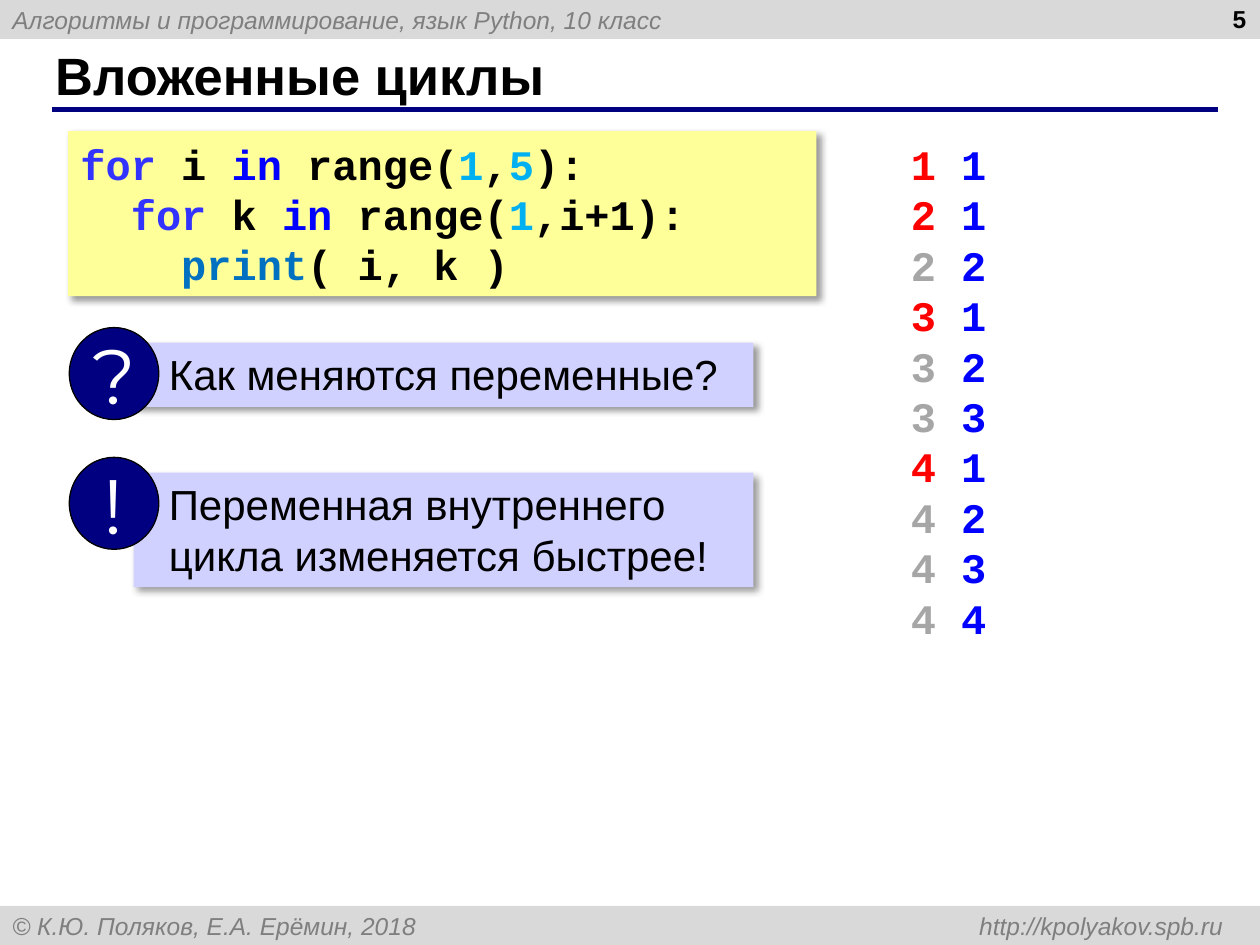
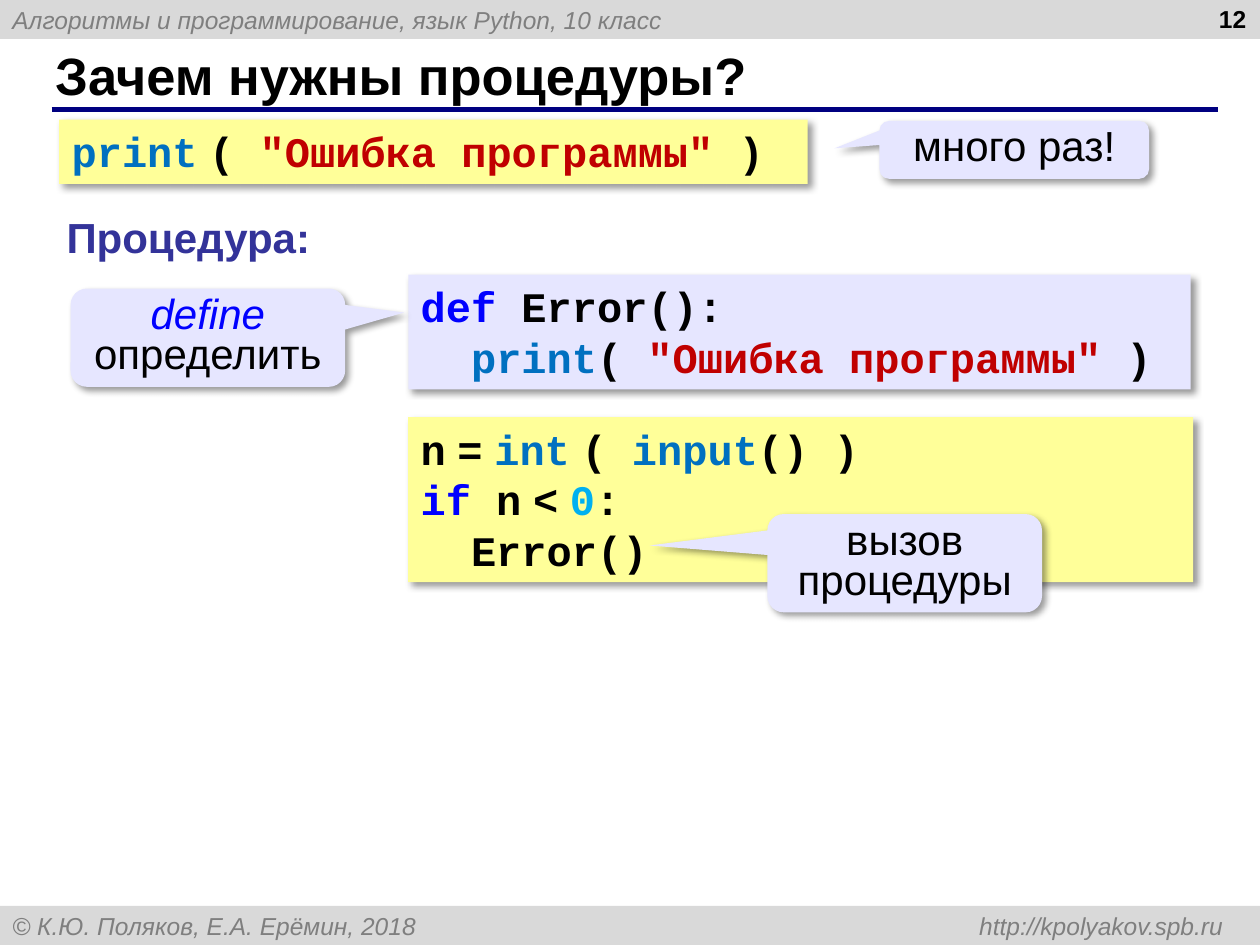
from pptx import Presentation
from pptx.dml.color import RGBColor
from pptx.enum.shapes import MSO_CONNECTOR, MSO_SHAPE
from pptx.enum.text import MSO_ANCHOR, PP_ALIGN
from pptx.oxml import parse_xml
from pptx.oxml.ns import nsdecls
from pptx.util import Inches, Pt

HUE = {
    "black": "000000", "white": "FFFFFF", "band": "D9D9D9", "gray": "7F7F7F",
    "navy": "000080", "yellow": "FFFF99", "lilac": "D1D1FF", "pale": "E6E6FF",
    "loop": "3333FF", "key": "0000FF", "num": "00B0F0", "func": "0070C0",
    "str": "C00000", "red": "FF0000", "dim": "A6A6A6", "head": "333399",
}
BAND = {"name": "Arial", "size": Pt(14), "italic": True}
PAGE = {"name": "Arial", "size": Pt(14), "bold": True}
TITLE = {"name": "Arial", "size": Pt(30), "bold": True}
HEAD = {"name": "Arial", "size": Pt(24), "bold": True}
BODY = {"name": "Arial", "size": Pt(24)}
CODE = {"name": "Courier New", "size": Pt(24), "bold": True}
SIGN = {"name": "Montserrat", "size": Pt(44)}
THIN = {"name": "Arial"}
GAP = (" ", "black", THIN)
STEP = 0.4
MID, TOP = MSO_ANCHOR.MIDDLE, MSO_ANCHOR.TOP
LEFT, CENTER, RIGHT = PP_ALIGN.LEFT, PP_ALIGN.CENTER, PP_ALIGN.RIGHT
RECT, OVAL = MSO_SHAPE.RECTANGLE, MSO_SHAPE.OVAL
CALL = MSO_SHAPE.ROUNDED_RECTANGULAR_CALLOUT


def write(shape, font, rows, anchor=TOP, align=LEFT, wrap=True, space=None):
    frame = shape.text_frame
    frame.word_wrap = wrap
    frame.vertical_anchor = anchor
    for n, (depth, *runs) in enumerate(rows):
        para = frame.add_paragraph() if n else frame.paragraphs[0]
        para.alignment = align
        para.line_spacing = space
        if depth:
            para._p.get_or_add_pPr().set("marL", str(Inches(depth * STEP)))
        for text, hue, *more in runs:
            run = para.add_run()
            run.text = text
            run.font.color.rgb = RGBColor.from_string(HUE[hue])
            for key, val in {**font, **(more[0] if more else {})}.items():
                setattr(run.font, key, val)


def draw(slide, kind, at, fill, shade=True):
    shape = slide.shapes.add_shape(kind, *map(Inches, at))
    shape.fill.solid()
    shape.fill.fore_color.rgb = RGBColor.from_string(HUE[fill])
    shape.line.fill.background()
    shape.shadow.inherit = False
    if shade:
        glow = shape._element.spPr.find(".//{*}effectLst")
        glow.append(parse_xml(
            f'<a:outerShdw {nsdecls("a")} blurRad="{Pt(4)}" dist="{Pt(3)}" '
            f'dir="2700000" algn="tl" rotWithShape="0"><a:srgbClr val="{HUE["black"]}">'
            '<a:alpha val="40000"/></a:srgbClr></a:outerShdw>'))
    return shape


deck = Presentation()
deck.slide_width, deck.slide_height = Inches(10), Inches(7.5)

pages = []
for title, page in [("Вложенные циклы", "5"), ("Зачем нужны процедуры?", "12")]:
    slide = deck.slides.add_slide(deck.slide_layouts[6])
    pages.append(slide)
    for top, text in [
        (0, "Алгоритмы и программирование, язык Python, 10 класс"),
        (7.19, "© К.Ю. Поляков, Е.А. Ерёмин, 2018 \thttp://kpolyakov.spb.ru"),
    ]:
        band = draw(slide, RECT, (0, top, 10, 0.31), "band", False)
        write(band, BAND, [(0, (text, "gray"))], MID)
    band.text_frame.paragraphs[0]._p.get_or_add_pPr().append(parse_xml(
        f'<a:tabLst {nsdecls("a")}><a:tab pos="{Inches(9.61)}" algn="r"/></a:tabLst>'))
    rule = slide.shapes.add_connector(
        MSO_CONNECTOR.STRAIGHT, *map(Inches, (0.41, 0.87, 9.67, 0.87)))
    rule.line.color.rgb = RGBColor.from_string(HUE["navy"])
    rule.line.width = Pt(3)
    rule._element.spPr.append(parse_xml(f'<a:effectLst {nsdecls("a")}/>'))
    for at, font, text, anchor, align in [
        ((0.34, 0.33, 9.16, 0.52), TITLE, title, MID, LEFT),
        ((7.66, -0.02, 2.33, 0.52), PAGE, page, TOP, RIGHT),
    ]:
        area = slide.shapes.add_textbox(*map(Inches, at))
        write(area, font, [(0, (text, "black"))], anchor, align)

loops, procs = pages

code = draw(loops, RECT, (0.54, 1.04, 5.94, 1.31), "yellow")
write(code, CODE, [
    (0, ("for", "loop"), (" i ", "black"), ("in", "key"), (" range(", "black"),
     ("1", "num"), (",", "black"), ("5", "num"), ("):", "black")),
    (1, ("for", "loop"), (" k ", "black"), ("in", "key"), (" range(", "black"),
     ("1", "num"), (",i+1):", "black")),
    (2, ("print", "func"), ("( i, k )", "black")),
], MID)

for top, high, sign, text in [
    (2.6, 0.51, "?", "Как меняются переменные?"),
    (3.63, 0.91, "!", "Переменная внутреннего цикла изменяется быстрее!"),
]:
    note = draw(loops, RECT, (1.06, top + 0.12, 4.92, high), "lilac")
    note.text_frame.margin_left = Inches(0.28)
    write(note, BODY, [(0, (text, "black"))])
    disc = draw(loops, OVAL, (0.55, top, 0.71, 0.73), "navy", False)
    disc.line.color.rgb = RGBColor.from_string(HUE["black"])
    disc.line.width = Pt(0.75)
    write(disc, SIGN, [(0, (sign, "white"))], MID, CENTER, False)

pairs = [(0, (f"{i} ", "red" if k == 1 else "dim"), (str(k), "key"))
         for i in range(1, 5) for k in range(1, i + 1)]
area = loops.shapes.add_textbox(*map(Inches, (7.13, 1.05, 1.01, 4.14)))
write(area, CODE, pairs, wrap=False)

error = [("( ", "black"), ('"Ошибка программы" ', "str"), (")", "black")]
for at, fill, rows in [
    ((0.47, 0.95, 5.94, 0.51), "yellow", [(0, ("print", "func"), GAP, *error)]),
    ((3.24, 2.18, 6.21, 0.91), "pale", [
        (0, ("def", "key"), (" Error():", "black")),
        (1, ("print", "func"), *error)]),
    ((3.24, 3.31, 6.23, 1.31), "yellow", [
        (0, ("n", "black"), GAP, ("=", "black"), GAP, ("int", "func"), GAP,
         ("( ", "black"), ("input", "func"), ("() )", "black")),
        (0, ("if", "key"), (" n", "black"), GAP, ("<", "black"), GAP,
         ("0", "num"), (":", "black")),
        (1, ("Error()", "black"))]),
]:
    write(draw(procs, RECT, at, fill), CODE, rows)

area = procs.shapes.add_textbox(*map(Inches, (0.43, 1.63, 2.15, 0.51)))
write(area, HEAD, [(0, ("Процедура:", "head"))], wrap=False)

for at, tip, runs in [
    ((6.98, 0.96, 2.14, 0.46), (-0.667, -0.026), [("много раз!", "black")]),
    ((6.09, 4.08, 2.18, 0.78), (-0.929, -0.18), [("вызов процедуры", "black")]),
    ((0.56, 2.29, 2.18, 0.78), (0.715, -0.256),
     [("define ", "key", {"italic": True}), ("определить", "black")]),
]:
    call = draw(procs, CALL, at, "pale")
    for n, val in enumerate((*tip, 0.167)):
        call.adjustments[n] = val
    write(call, BODY, [(0, *runs)], MID, CENTER, space=0.8)

deck.save("out.pptx")
